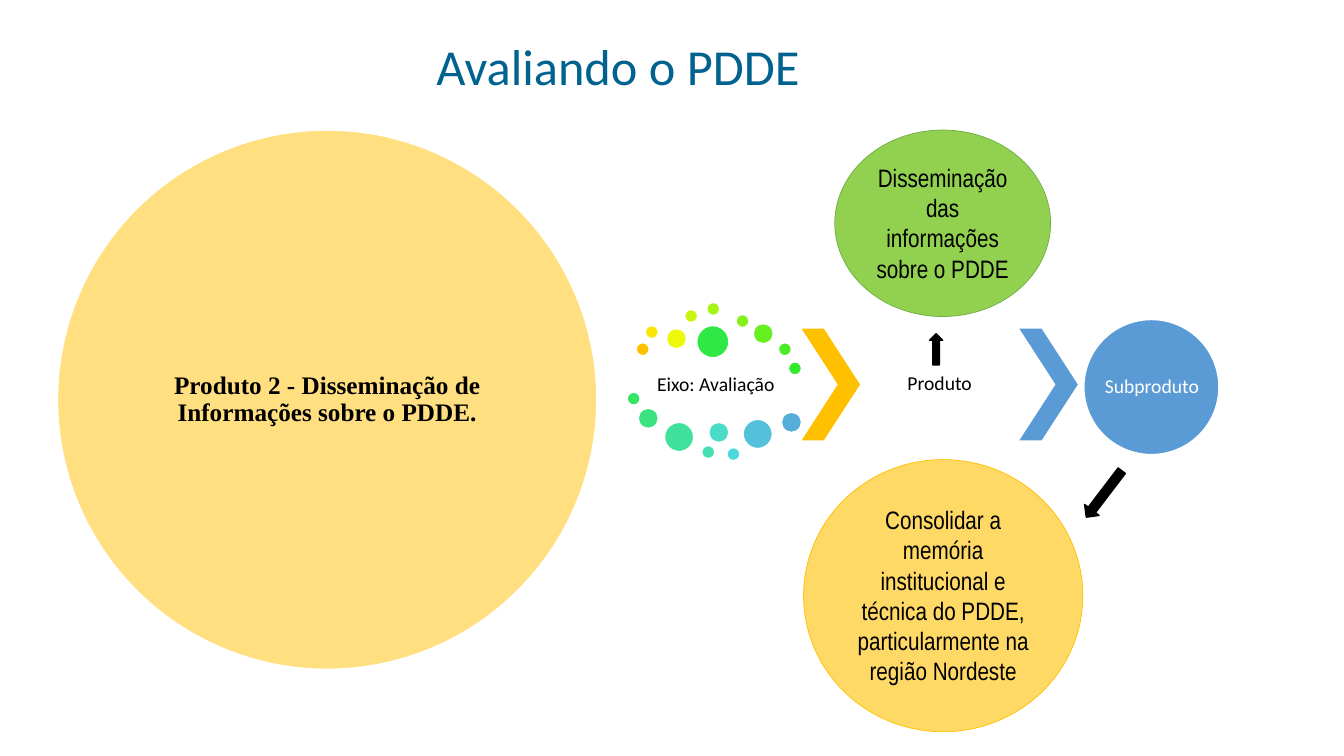
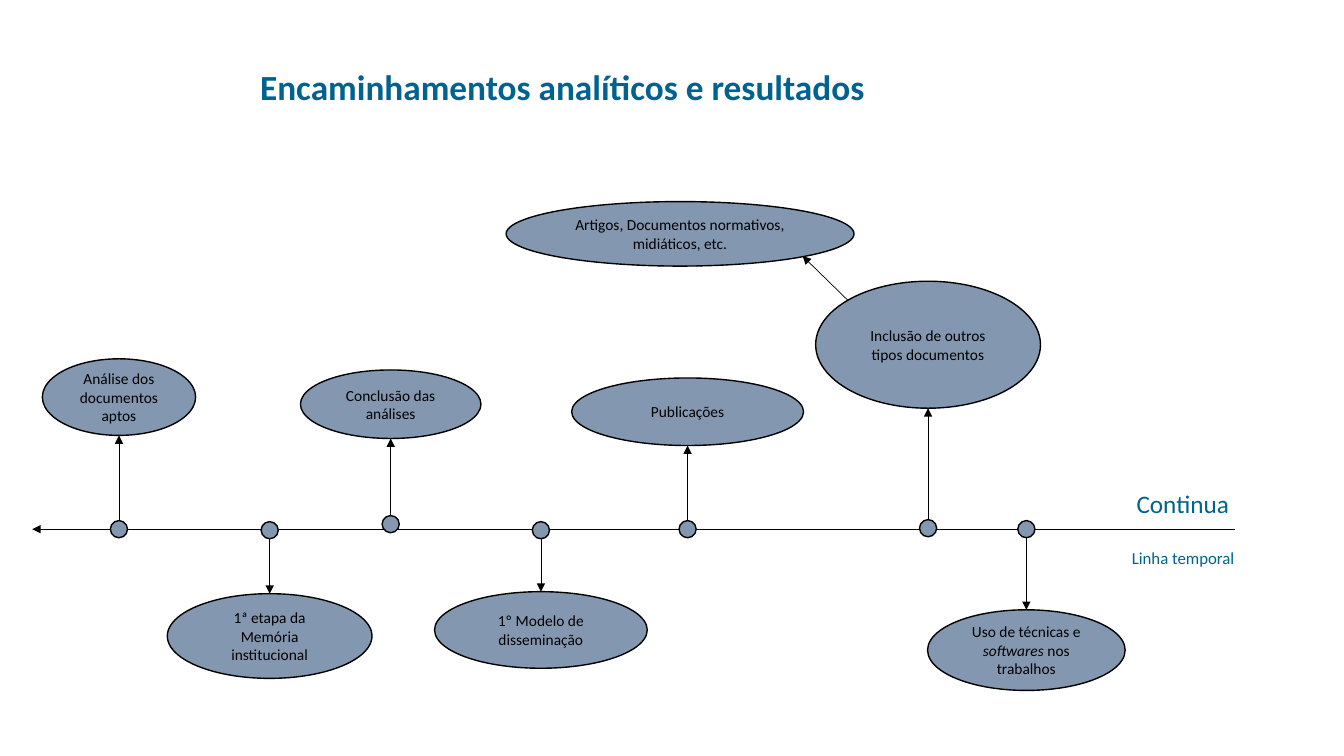
import pptx
import pptx.util
import pptx.dml.color
import pptx.enum.shapes
import pptx.enum.text
import pptx.oxml.ns
import lxml.etree

Inches = pptx.util.Inches
Pt = pptx.util.Pt
Kind = pptx.enum.shapes.MSO_SHAPE
Align = pptx.enum.text.PP_ALIGN
Anchor = pptx.enum.text.MSO_ANCHOR
qn = pptx.oxml.ns.qn

# Shared colours and text formats
BLACK, WHITE, NAVY = "000000", "FFFFFF", "00628F"
GOLD, BLUE, SLATE = "FFC000", "5B9BD5", "8497B0"
HEAD = {"name": "Calibri", "size": Pt(36), "color": NAVY}
LABEL = {"name": "Calibri", "size": Pt(14), "color": BLACK}
STEP = {**LABEL, "size": Pt(11)}
NOTE = {"name": "Arial Narrow", "size": Pt(18), "color": BLACK}
SERIF = {"name": "Times New Roman", "size": Pt(18), "bold": True,
         "color": BLACK}


def rgb(code):
    return pptx.dml.color.RGBColor.from_string(code)


def style(font, form):
    for key, value in form.items():
        if key == "color":
            font.color.rgb = rgb(value)
        else:
            setattr(font, key, value)


def write(shape, text, form, inset=None, space=None, align=Align.CENTER,
          anchor=Anchor.MIDDLE):
    """Fill a shape with one paragraph; text is a string or (words, italic) runs."""
    frame = shape.text_frame
    frame.word_wrap = True
    frame.vertical_anchor = anchor
    if inset is not None:
        for side in ("left", "right", "top", "bottom"):
            setattr(frame, "margin_" + side, Inches(inset))
    para = frame.paragraphs[0]
    para.alignment = align
    para.line_spacing = space
    for words, slant in ([(text, None)] if isinstance(text, str) else text):
        run = para.add_run()
        run.text = words
        style(run.font, {**form, "italic": slant})


def place(box):
    return [Inches(size) for size in box]


def shape(slide, kind, box, fill, line=None, width=1, turn=0):
    item = slide.shapes.add_shape(kind, *place(box))
    item.shadow.inherit = False
    item.fill.solid()
    item.fill.fore_color.rgb = rgb(fill)
    if line:
        item.line.color.rgb = rgb(line)
        item.line.width = Pt(width)
    else:
        item.line.fill.background()
    item.rotation = turn
    return item


def label(slide, box, text, form, inset=None, space=None):
    write(slide.shapes.add_textbox(*place(box)), text, form, inset, space)


def arrow(slide, start, end):
    line = slide.shapes.add_connector(
        pptx.enum.shapes.MSO_CONNECTOR.STRAIGHT, *place(start + end))
    line.line.color.rgb = rgb(BLACK)
    line.line.width = Pt(0.5)
    stroke = line.element.spPr.find(qn("a:ln"))
    lxml.etree.SubElement(stroke, qn("a:tailEnd"), type="triangle")
    lxml.etree.SubElement(line.element.spPr, qn("a:effectLst"))


def page(deck, text, box, form, **more):
    """Add a title-only slide with its heading."""
    slide = deck.slides.add_slide(deck.slide_layouts[5])
    title = slide.shapes.title
    title.left, title.top, title.width, title.height = place(box)
    write(title, text, {**HEAD, **form}, space=0.9, **more)
    return slide


def disc(slide, x, y, size):
    """Large translucent circle naming the product."""
    item = shape(slide, Kind.OVAL, (x, y, size, size), GOLD, WHITE)
    color = item.element.spPr.find(qn("a:solidFill")).find(qn("a:srgbClr"))
    lxml.etree.SubElement(color, qn("a:alpha"), val="50000")
    pad, side = size * 0.147, size * 0.706
    label(slide, (x + pad, y + pad, side, side),
          "Produto 2 - Disseminação de Informações sobre o PDDE.",
          SERIF, 0, 0.9)


# Dots around the axis name: left, top, diameter, colour
DOTS = [
    (0.09, 0.4, 0.13, GOLD), (0.18, 0.23, 0.13, "FCE506"),
    (0.39, 0.26, 0.2, "ECF90B"), (0.57, 0.07, 0.13, "C7F711"),
    (0.79, 0, 0.13, "A4F416"), (1.08, 0.12, 0.13, "84F11B"),
    (1.25, 0.21, 0.2, "67EF21"), (1.5, 0.4, 0.13, "4BEC26"),
    (1.6, 0.59, 0.13, "32EA2B"), (0.69, 0.23, 0.32, "30E845"),
    (0, 0.89, 0.13, "35E564"), (0.11, 1.05, 0.2, "3AE380"),
    (0.37, 1.19, 0.29, "3FE19B"), (0.74, 1.42, 0.13, "44DFB3"),
    (0.81, 1.19, 0.2, "49DDC9"), (0.99, 1.44, 0.13, "4DD8DB"),
    (1.15, 1.16, 0.29, "52C1D9"), (1.53, 1.09, 0.2, "56ADD7"),
]


def flow(slide, x, y):
    """Axis, product and subproduct, joined by chevrons."""
    for left, top, size, color in DOTS:
        shape(slide, Kind.OVAL, (x + left, y + top, size, size), color, WHITE)
    label(slide, (x + 0.09, y + 0.56, 1.58, 0.52), "Eixo: Avaliação",
          LABEL, 0.02, 0.9)
    for left, color in ((1.73, GOLD), (3.89, BLUE)):
        mark = shape(slide, Kind.CHEVRON,
                     (x + left, y + 0.26, 0.58, 1.11), color)
        mark.adjustments[0] = 0.62
    label(slide, (x + 2.31, y + 0.26, 1.58, 1.11), "Produto",
          LABEL, 0.02, 0.9)
    shape(slide, Kind.OVAL, (x + 4.53, y + 0.17, 1.34, 1.34), BLUE, WHITE)
    label(slide, (x + 4.73, y + 0.37, 0.95, 0.95), "Subproduto",
          {**LABEL, "color": WHITE}, 0, 0.9)


def notes(slide, x, y):
    """Ovals above and below the flow, with their block arrows."""
    ovals = [
        ((x + 0.31, y, 2.14, 1.85), "92D050", "70AD47",
         "Disseminação das informações sobre o PDDE"),
        ((x, y + 3.27, 2.77, 2.7), "FFD966", GOLD,
         "Consolidar a memória institucional e técnica do PDDE, "
         "particularmente na região Nordeste"),
    ]
    for box, fill, line, text in ovals:
        write(shape(slide, Kind.OVAL, box, fill, line, 0.5), text, NOTE,
              anchor=Anchor.TOP)
    for box, turn in (((x + 1.16, y + 2.11, 0.31, 0.13), 270),
                      ((x + 2.69, y + 3.52, 0.58, 0.18), 127.3)):
        shape(slide, Kind.RIGHT_ARROW, box, BLACK, BLACK, turn=turn)


# Steps: box relative to the line's left end, dot shift, text
STEPS = [
    ((0.1, -1.69, 1.52, 0.76), 0, "Análise dos documentos aptos"),
    ((1.34, 0.64, 2.03, 0.84), 0.01, "1ª etapa da Memória institucional"),
    ((2.66, -1.58, 1.79, 0.68), -0.05, "Conclusão das análises"),
    ((3.99, 0.62, 2.11, 0.76), 0.01, "1º Modelo de disseminação"),
    ((5.35, -1.5, 2.3, 0.67), 0, "Publicações"),
    ((7.77, -2.46, 2.23, 1.26), -0.01, "Inclusão de outros tipos documentos"),
    ((8.88, 0.8, 1.96, 0.8), 0, [("Uso de técnicas e ", None),
                                 ("softwares", True),
                                 (" nos trabalhos", None)]),
]


def oval(slide, box, text):
    write(shape(slide, Kind.OVAL, box, SLATE, BLACK), text, STEP)


def times(slide, x, y, width):
    """Time line with a dot, an arrow and an oval for each step."""
    arrow(slide, (x + width, y), (x, y))
    rad = 0.085
    for (left, top, wide, high), shift, text in STEPS:
        mid, dot = x + left + wide / 2, y + shift
        shape(slide, Kind.OVAL, (mid - rad, dot - rad, 2 * rad, 2 * rad),
              SLATE, BLACK)
        oval(slide, (x + left, y + top, wide, high), text)
        if top < 0:
            arrow(slide, (mid, dot - rad), (mid, y + top + high))
        else:
            arrow(slide, (mid, dot + rad), (mid, y + top))
    # Branch from the last upper step
    oval(slide, (x + 4.7, y - 3.25, 3.45, 0.64),
         "Artigos, Documentos normativos, midiáticos, etc.")
    arrow(slide, (x + 8.09, y - 2.27), (x + 7.64, y - 2.71))
    # Captions at the right end
    for box, text, size in (
            ((x + 10.67, y - 0.46, 1.48, 0.4), "Continua", 18),
            ((x + 10.49, y + 0.13, 1.85, 0.3), "Linha temporal", 12)):
        label(slide, box, text, {**HEAD, "size": Pt(size)})


def main():
    deck = pptx.Presentation()
    deck.slide_width, deck.slide_height = Inches(13.33), Inches(7.5)

    slide = page(deck, "Avaliando o PDDE", (3.55, 0.09, 5.16, 1.2), {})
    disc(slide, 0.57, 1.29, 5.35)
    flow(slide, 6.22, 3)
    notes(slide, 7.97, 1.29)

    slide = page(deck, "Encaminhamentos analíticos e resultados",
                 (2.45, 0.46, 7.31, 0.84), {"size": Pt(25.2), "bold": True},
                 inset=0.13, align=Align.LEFT)
    times(slide, 0.32, 5.25, 11.93)

    deck.save("out.pptx")


if __name__ == "__main__":
    main()
